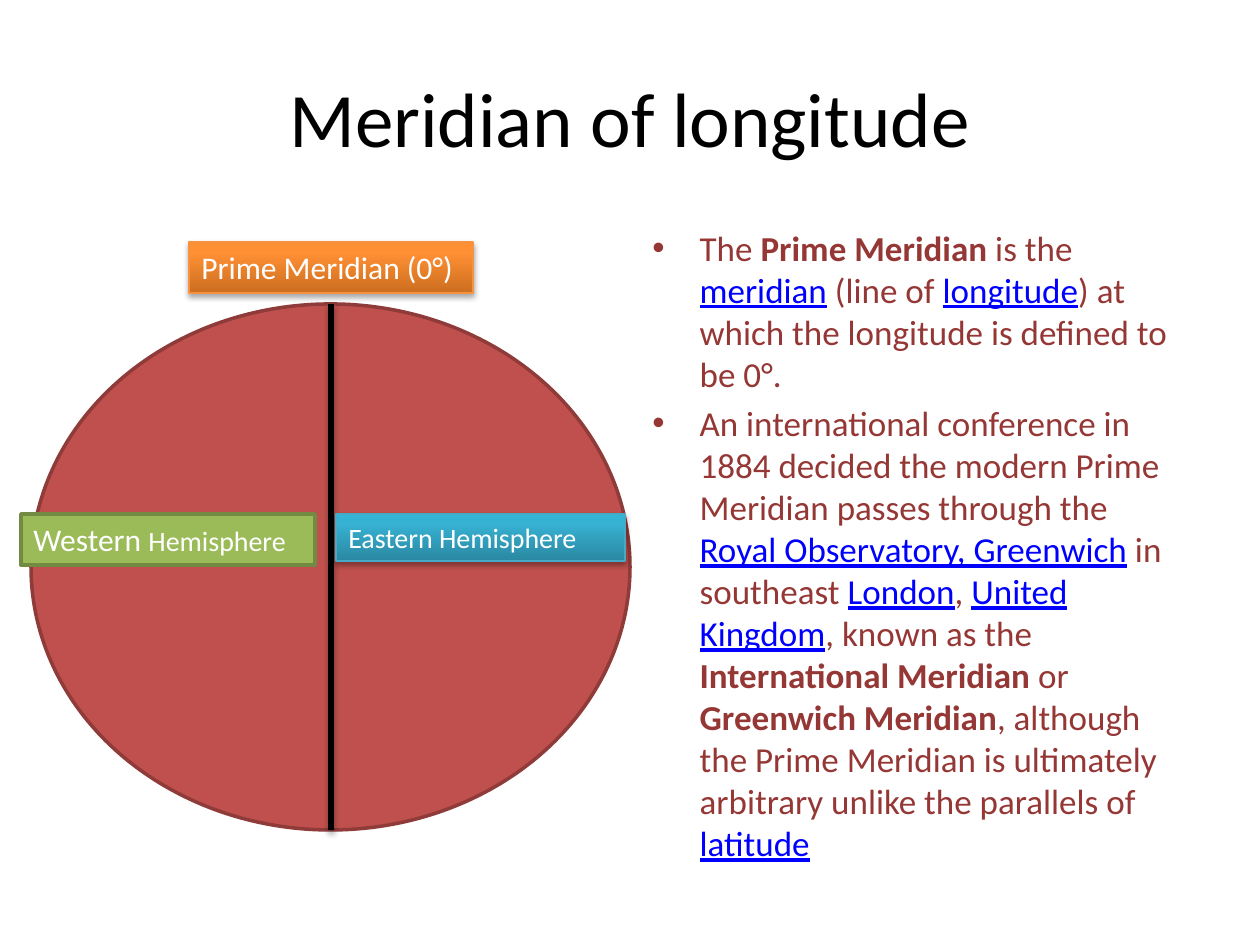
from dataclasses import dataclass

from lxml.etree import SubElement
from pptx import Presentation
from pptx.dml.color import RGBColor
from pptx.enum.shapes import MSO_CONNECTOR as Conn, MSO_SHAPE as Shape
from pptx.enum.text import MSO_ANCHOR as Anchor, MSO_AUTO_SIZE as AutoSize, PP_ALIGN as Align
from pptx.oxml.ns import qn
from pptx.util import Emu, Pt

PX = 914400 / 126
FONT = "Calibri"
COLORS = {
    "black": "000000", "white": "FFFFFF", "body": "953735", "link": "0000FF",
    "globe": "C0504D", "globe_edge": "8E3B39",
    "west": "9BBB59", "west_edge": "738A42",
    "prime_edge": "F69240", "east_edge": "46AAC5",
    "prime_0": "CC6E20", "prime_80": "FF9034", "prime_100": "FF9136",
    "east_0": "2A88A2", "east_80": "37B1D2", "east_100": "34B4D6",
}


@dataclass
class Run:
    text: str
    bold: bool = False
    link: bool = False


@dataclass
class Label:
    box: tuple[int, int, int, int]
    runs: list[tuple[str, int]]  # text, size in points
    color: str
    edge_pt: float
    raised: bool  # gradient fill and shadow


LABELS = [
    Label((189, 242, 284, 51), [("Prime Meridian (0°)", 18)], "prime", 0.75, True),
    Label((21, 514, 294, 51), [("Western ", 18), ("Hemisphere", 16)], "west", 2, False),
    Label((336, 514, 289, 47), [("Eastern Hemisphere", 16)], "east", 0.75, True),
]

BULLETS = [
    [Run("The "), Run("Prime Meridian", bold=True), Run(" is the "),
     Run("meridian", link=True), Run(" (line of "), Run("longitude", link=True),
     Run(") at which the longitude is defined to be 0°.")],
    [Run("An international conference in 1884 decided the modern Prime Meridian "
         "passes through the "),
     Run("Royal Observatory, Greenwich", link=True), Run(" in southeast "),
     Run("London", link=True), Run(", "), Run("United Kingdom", link=True),
     Run(", known as the "), Run("International Meridian", bold=True), Run(" or "),
     Run("Greenwich Meridian", bold=True),
     Run(", although the Prime Meridian is ultimately arbitrary unlike the parallels of "),
     Run("latitude", link=True)],
]


def px(*values: int) -> list[Emu]:
    return [Emu(round(v * PX)) for v in values]


def rgb(name: str) -> RGBColor:
    return RGBColor.from_string(COLORS[name])


def set_font(font, size: int, color: str) -> None:
    font.name, font.size = FONT, Pt(size)
    font.color.rgb = rgb(color)


def set_line(line, color: str, width: float) -> None:
    line.color.rgb = rgb(color)
    line.width = Pt(width)


def add_shadow(effects) -> None:
    shadow = SubElement(effects, qn("a:outerShdw"), blurRad="40000", dist="23000",
                        dir="5400000", rotWithShape="0")
    color = SubElement(shadow, qn("a:srgbClr"), val=COLORS["black"])
    SubElement(color, qn("a:alpha"), val="35000")


def add_gradient(sp, name: str) -> None:
    props = sp._element.spPr
    grad = SubElement(props, qn("a:gradFill"), rotWithShape="1")
    stops = SubElement(grad, qn("a:gsLst"))
    for pos in (0, 80, 100):
        stop = SubElement(stops, qn("a:gs"), pos=str(pos * 1000))
        SubElement(stop, qn("a:srgbClr"), val=COLORS[f"{name}_{pos}"])
    SubElement(grad, qn("a:lin"), ang="16200000", scaled="0")
    props.find(qn("a:prstGeom")).addnext(grad)


def add_text_box(s, box: tuple[int, int, int, int]):
    tf = s.shapes.add_textbox(*px(*box)).text_frame
    tf.word_wrap = True
    return tf


def add_bullet(p, runs: list[Run]) -> None:
    p.space_before = Pt(4)
    props = p._p.get_or_add_pPr()
    props.set("marL", "342900")
    props.set("indent", "-342900")
    SubElement(props, qn("a:buFont"), typeface="Arial")
    SubElement(props, qn("a:buChar"), char="•")
    for run in runs:
        r = p.add_run()
        r.text = run.text
        set_font(r.font, 20, "link" if run.link else "body")
        r.font.bold, r.font.underline = run.bold, run.link


def add_label(s, label: Label) -> None:
    sp = s.shapes.add_shape(Shape.RECTANGLE, *px(*label.box))
    sp.shadow.inherit = False
    set_line(sp.line, f"{label.color}_edge", label.edge_pt)
    if label.raised:
        add_gradient(sp, label.color)
        add_shadow(sp._element.spPr.find(qn("a:effectLst")))
    else:
        sp.fill.solid()
        sp.fill.fore_color.rgb = rgb(label.color)
    tf = sp.text_frame
    tf.word_wrap = True
    tf.auto_size = AutoSize.SHAPE_TO_FIT_TEXT
    tf.vertical_anchor = Anchor.TOP
    p = tf.paragraphs[0]
    p.alignment = Align.LEFT
    for text, size in label.runs:
        r = p.add_run()
        r.text = text
        set_font(r.font, size, "white")


def main() -> None:
    prs = Presentation()
    prs.slide_width, prs.slide_height = px(1260, 945)
    s = prs.slides.add_slide(prs.slide_layouts[6])

    # Title
    tf = add_text_box(s, (63, 38, 1134, 157))
    tf.vertical_anchor = Anchor.MIDDLE
    p = tf.paragraphs[0]
    p.text = "Meridian of longitude"
    p.alignment = Align.CENTER
    set_font(p.font, 44, "black")

    # Explanation
    tf = add_text_box(s, (640, 220, 557, 624))
    for i, runs in enumerate(BULLETS):
        add_bullet(tf.add_paragraph() if i else tf.paragraphs[0], runs)

    # Globe
    globe = s.shapes.add_shape(Shape.OVAL, *px(31, 304, 599, 526))
    globe.shadow.inherit = False
    globe.fill.solid()
    globe.fill.fore_color.rgb = rgb("globe")
    set_line(globe.line, "globe_edge", 2)

    # Prime meridian
    meridian = s.shapes.add_connector(Conn.STRAIGHT, *px(331, 304, 331, 830))
    set_line(meridian.line, "black", 3)
    add_shadow(SubElement(meridian._element.spPr, qn("a:effectLst")))

    # Labels
    for label in LABELS:
        add_label(s, label)

    prs.save("out.pptx")


if __name__ == "__main__":
    main()
